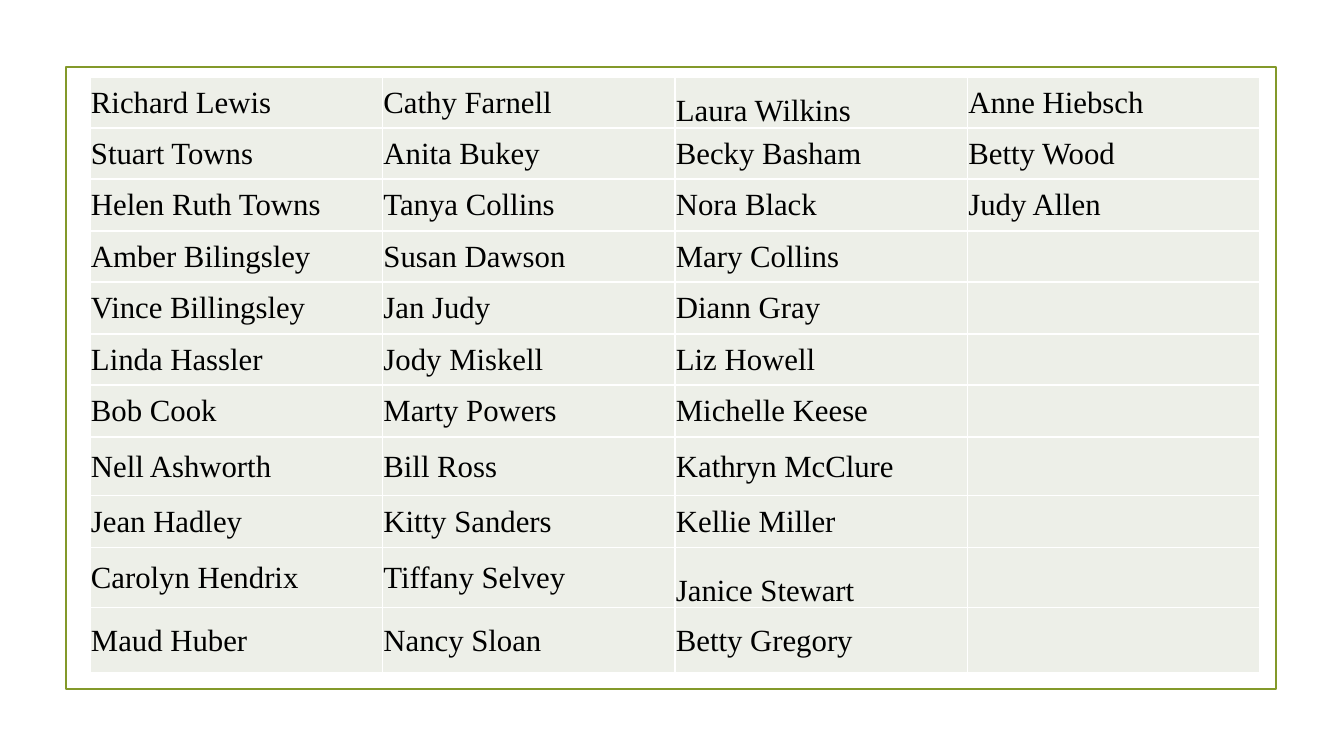
from lxml import etree
from pptx import Presentation
from pptx.dml.color import RGBColor
from pptx.enum.shapes import MSO_SHAPE
from pptx.enum.text import MSO_ANCHOR, PP_ALIGN
from pptx.oxml.ns import qn
from pptx.util import Pt

RECT = MSO_SHAPE.RECTANGLE
MIDDLE, BOTTOM = MSO_ANCHOR.MIDDLE, MSO_ANCHOR.BOTTOM
LEFT = PP_ALIGN.LEFT

# Content: one tuple per table column
NAMES = [
    ("Richard Lewis", "Stuart Towns", "Helen Ruth Towns", "Amber Bilingsley",
     "Vince Billingsley", "Linda Hassler", "Bob Cook", "Nell Ashworth",
     "Jean Hadley", "Carolyn Hendrix", "Maud Huber"),
    ("Cathy Farnell", "Anita Bukey", "Tanya Collins", "Susan Dawson",
     "Jan Judy", "Jody Miskell", "Marty Powers", "Bill Ross",
     "Kitty Sanders", "Tiffany Selvey", "Nancy Sloan"),
    ("Laura Wilkins", "Becky Basham", "Nora Black", "Mary Collins",
     "Diann Gray", "Liz Howell", "Michelle Keese", "Kathryn McClure",
     "Kellie Miller", "Janice Stewart", "Betty Gregory"),
    ("Anne Hiebsch", "Betty Wood", "Judy Allen"),
]
LOW = {"Laura Wilkins", "Janice Stewart"}  # names set at the cell bottom

# Lengths in px
WIDE, HIGH = 1344, 756
FRAME = (66, 67, 1210, 622)
TABLE_X, TABLE_W = 90, 1170
EDGES = [77, 128, 179, 231, 282, 334, 385, 437, 496, 548, 608, 673]

FONT = "Times New Roman"
BLACK = RGBColor(0x00, 0x00, 0x00)
WHITE = RGBColor(0xFF, 0xFF, 0xFF)
GREEN = RGBColor(0x83, 0x99, 0x2A)
PALE = RGBColor(0xED, 0xEF, 0xE8)


def px(n):
    return round(n * 914400 / 100.8)


def write(cell, text, size=22, color=BLACK, anchor=MIDDLE):
    cell.vertical_anchor = anchor
    cell.margin_left = cell.margin_right = cell.margin_top = px(1)
    cell.margin_bottom = 0
    para = cell.text_frame.paragraphs[0]
    para.alignment = LEFT
    para.font.size = Pt(size)
    if text:
        run = para.add_run()
        run.text = text
        run.font.name = FONT
        run.font.size = Pt(size)
        run.font.color.rgb = color


def border(cell, color=WHITE, width=1):
    props = cell._tc.get_or_add_tcPr()
    for i, side in enumerate(("lnL", "lnR", "lnT", "lnB")):
        line = etree.Element(qn("a:" + side), w=str(Pt(width)))
        fill = etree.SubElement(line, qn("a:solidFill"))
        etree.SubElement(fill, qn("a:srgbClr"), val=str(color))
        props.insert(i, line)


def main():
    deck = Presentation()
    deck.slide_width, deck.slide_height = px(WIDE), px(HIGH)
    slide = deck.slides.add_slide(deck.slide_layouts[6])

    # Green frame
    frame = slide.shapes.add_shape(RECT, *map(px, FRAME))
    frame.shadow.inherit = False
    frame.fill.background()
    frame.line.color.rgb = GREEN
    frame.line.width = Pt(1.25)

    # Table of names
    rows, cols = len(EDGES) - 1, len(NAMES)
    table = slide.shapes.add_table(
        rows, cols, px(TABLE_X), px(EDGES[0]),
        px(TABLE_W), px(EDGES[-1] - EDGES[0])).table
    table.first_row = table.horz_banding = False
    for row, top, end in zip(table.rows, EDGES, EDGES[1:]):
        row.height = px(end - top)
    for c, names in enumerate(NAMES):
        table.columns[c].width = px(TABLE_W / cols)
        for r in range(rows):
            cell = table.cell(r, c)
            name = names[r] if r < len(names) else ""
            write(cell, name, anchor=BOTTOM if name in LOW else MIDDLE)
            border(cell)
            cell.fill.solid()
            cell.fill.fore_color.rgb = PALE

    deck.save("out.pptx")


if __name__ == "__main__":
    main()
